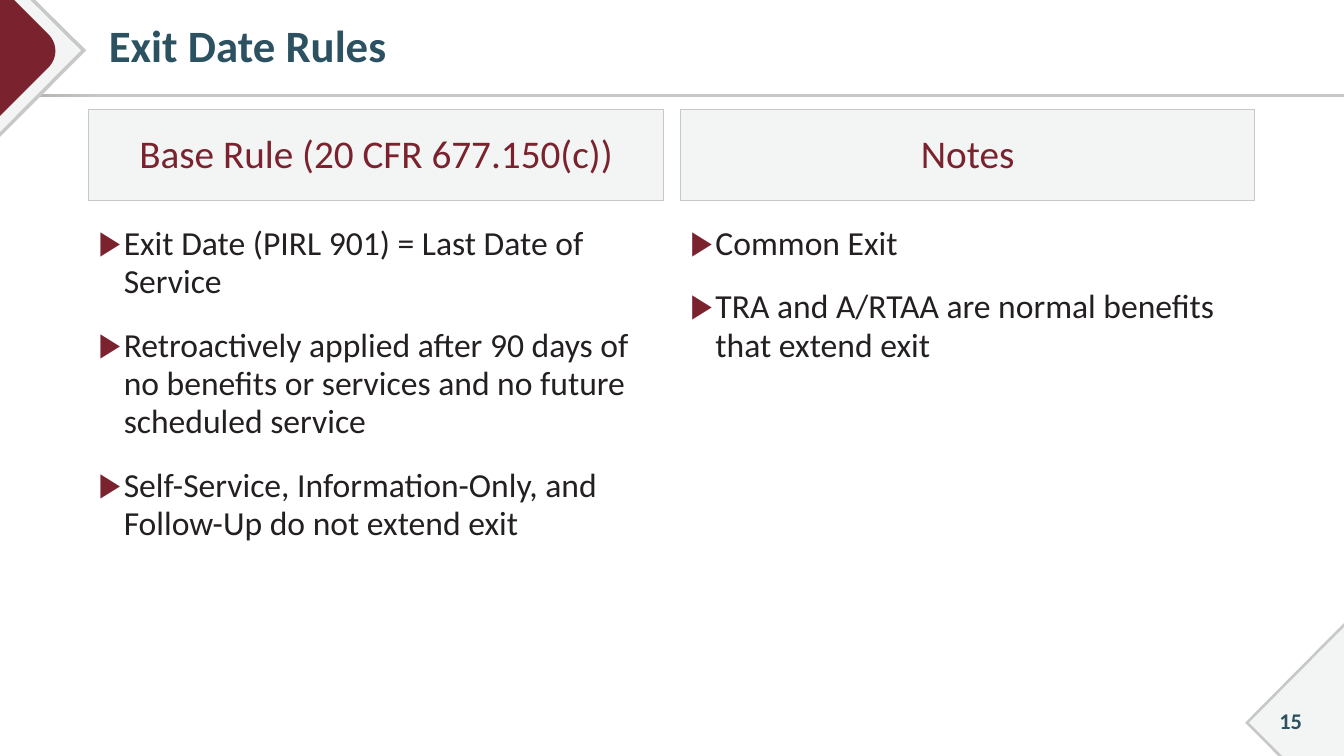
import pptx
import pptx.util
import pptx.dml.color
import pptx.enum.text
import pptx.enum.shapes
import pptx.oxml

Pt = pptx.util.Pt
ALIGN = pptx.enum.text.PP_ALIGN
ANCHOR = pptx.enum.text.MSO_ANCHOR
RECTANGLE = pptx.enum.shapes.MSO_SHAPE.RECTANGLE

HEADING = "Exit Date Rules"
PAGE = "15"
COLUMNS = [
    ("Base Rule (20 CFR 677.150(c))", [
        "Exit Date (PIRL 901) = Last Date of Service",
        "Retroactively applied after 90 days of no benefits or services and no future scheduled service",
        "Self-Service, Information-Only, and Follow-Up do not extend exit",
    ]),
    ("Notes", [
        "Common Exit",
        "TRA and A/RTAA are normal benefits that extend exit",
    ]),
]

THEME = {
    "font": "Calibri",
    "teal": "2C5261", "maroon": "7A232F", "ink": "242021",
    "panel": "F3F4F4", "edge": "C8C8C6", "edge_dark": "ABABA8",
    "title": 32, "header": 28, "body": 24, "page": 16,
}

WIDTH, HEIGHT = 960, 540
LEFT, COLUMN_WIDTH, COLUMN_STEP = 63.36, 410.4, 422.64
HEADER_TOP, HEADER_HEIGHT = 78.5, 64.8
BODY_TOP, BODY_HEIGHT = 157, 330.5
INDENT = 18


def bezier(start, pull_a, pull_b, end, steps=16):
    curve = []
    for step in range(steps + 1):
        t = step / steps
        weights = ((1 - t) ** 3, 3 * t * (1 - t) ** 2, 3 * t * t * (1 - t), t ** 3)
        curve.append(tuple(sum(w * p[axis] for w, p in zip(weights, (start, pull_a, pull_b, end)))
                           for axis in (0, 1)))
    return curve


CORNERS = [
    ("edge", [(0, 0), (25.2, 0), (61.6, 36), (0, 97.9)]),
    ("panel", [(0, 0), (21.6, 0), (57.8, 36), (0, 94.2)]),
    ("maroon", [(0, 0), (10.1, 0),
                *bezier((34.6, 24.5), (41.2, 31.1), (41.2, 41.6), (34.6, 48.2)), (0, 82.8)]),
    ("edge", [(WIDTH, 445), (WIDTH, HEIGHT), (913, HEIGHT), (889.4, 516.2)]),
    ("panel", [(WIDTH, 447.9), (WIDTH, HEIGHT), (916, HEIGHT), (892.2, 516.2)]),
]


def color(name):
    return pptx.dml.color.RGBColor.from_string(THEME[name])


def box(left, top, width, height):
    return [Pt(value) for value in (left, top, width, height)]


def assign(target, values):
    for name, value in values.items():
        setattr(target, name, value)


def paint(part, fill):
    part.shadow.inherit = False
    part.fill.solid()
    part.fill.fore_color.rgb = color(fill)
    part.line.fill.background()


def add_bullet(paragraph):
    properties = paragraph._p.get_or_add_pPr()
    properties.set("marL", str(Pt(INDENT)))
    properties.set("indent", str(-Pt(INDENT)))
    for tag, content in (("buClr", f'<a:srgbClr val="{THEME["maroon"]}"/>'),
                         ("buFont", ""), ("buChar", "")):
        attributes = {"buFont": f'typeface="{THEME["font"]}"', "buChar": 'char="▶"'}.get(tag, "")
        properties.append(pptx.oxml.parse_xml(
            f'<a:{tag} xmlns:a="http://schemas.openxmlformats.org/drawingml/2006/main" '
            f'{attributes}>{content}</a:{tag}>'))


def write(part, lines, size, ink, align=ALIGN.LEFT, anchor=ANCHOR.MIDDLE,
          spacing=1.0, bold=False, bullets=False, inset=7.2):
    frame = part.text_frame
    assign(frame, {
        "word_wrap": True, "auto_size": pptx.enum.text.MSO_AUTO_SIZE.NONE,
        "vertical_anchor": anchor, "margin_left": Pt(inset), "margin_right": Pt(7.2),
        "margin_top": Pt(3.6), "margin_bottom": Pt(3.6),
    })
    for index, line in enumerate(lines):
        paragraph = frame.add_paragraph() if index else frame.paragraphs[0]
        if bullets:
            add_bullet(paragraph)
        assign(paragraph, {"alignment": align, "line_spacing": spacing,
                           "space_before": Pt(18 if index else 0)})
        run = paragraph.add_run()
        run.text = line
        assign(run.font, {"name": THEME["font"], "size": Pt(THEME[size]), "bold": bold})
        run.font.color.rgb = color(ink)


def add_rule(slide):
    rule = slide.shapes.add_shape(RECTANGLE, *box(0, 67, WIDTH, 2.2))
    paint(rule, "edge")
    rule.fill.gradient()
    rule.fill.gradient_angle = 0
    for stop, (position, shade) in zip(rule.fill.gradient_stops, ((0, "edge_dark"), (0.08, "edge"))):
        stop.position = position
        stop.color.rgb = color(shade)


def add_corner(slide, fill, points):
    start, *rest = [(Pt(x), Pt(y)) for x, y in points]
    outline = slide.shapes.build_freeform(*start, scale=1.0)
    outline.add_line_segments(rest, close=True)
    paint(outline.convert_to_shape(), fill)


def add_column(slide, left, header, rules):
    panel = slide.shapes.add_shape(RECTANGLE, *box(left, HEADER_TOP, COLUMN_WIDTH, HEADER_HEIGHT))
    paint(panel, "panel")
    panel.line.color.rgb = color("edge")
    panel.line.width = Pt(0.75)
    write(panel, [header], "header", "maroon", ALIGN.CENTER, spacing=0.95)
    body = slide.shapes.add_textbox(*box(left, BODY_TOP, COLUMN_WIDTH, BODY_HEIGHT))
    write(body, rules, "body", "ink", anchor=ANCHOR.TOP, spacing=0.95, bullets=True)


def main():
    deck = pptx.Presentation()
    assign(deck, {"slide_width": Pt(WIDTH), "slide_height": Pt(HEIGHT)})
    slide = deck.slides.add_slide(deck.slide_layouts[5])
    add_rule(slide)
    for fill, points in CORNERS:
        add_corner(slide, fill, points)
    page = slide.shapes.add_textbox(*box(896.4, 500.4, 51.1, 28.8))
    write(page, [PAGE], "page", "teal", ALIGN.CENTER, bold=True)
    title = slide.shapes.title
    assign(title, dict(zip(("left", "top", "width", "height"), box(LEFT, 3.6, 872.6, 61.9))))
    write(title, [HEADING], "title", "teal", spacing=0.9, bold=True, inset=14.4)
    for index, (header, rules) in enumerate(COLUMNS):
        add_column(slide, LEFT + index * COLUMN_STEP, header, rules)
    deck.save("out.pptx")


if __name__ == "__main__":
    main()
